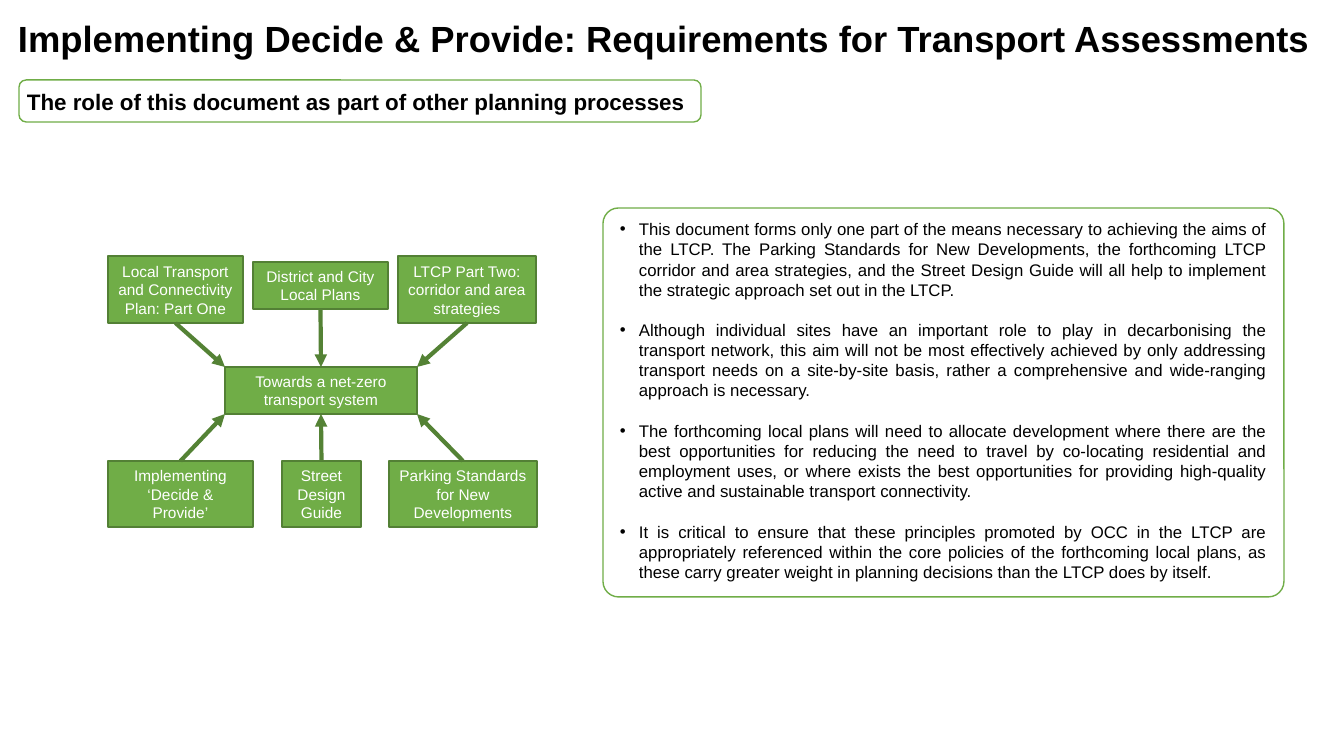
from lxml.etree import SubElement
from pptx import Presentation
from pptx.dml.color import RGBColor
from pptx.enum.shapes import MSO_CONNECTOR, MSO_SHAPE
from pptx.enum.text import MSO_ANCHOR, MSO_AUTO_SIZE, PP_ALIGN
from pptx.oxml.ns import qn
from pptx.util import Pt

SCALE = 12192000 / 1344  # EMU in one px
FONT = "Arial"
COLORS = {
    "text": "000000",
    "white": "FFFFFF",
    "green": "70AD47",
    "edge": "538035",
    "arrow": "548235",
}

TITLE = "Implementing Decide & Provide: Requirements for Transport Assessments"
ROLE = "The role of this document as part of other planning processes"

# Central box, then the documents feeding it: left, top, width, height, lines
HUB = (225, 367, 192, 47, ["Towards a net-zero", "transport system"])
UPPER = [
    (108, 256, 135, 67, ["Local Transport and Connectivity Plan: Part One"]),
    (253, 262, 135, 47, ["District and City", "Local Plans"]),
    (398, 256, 138, 67, ["LTCP Part Two: corridor and area strategies"]),
]
LOWER = [
    (108, 461, 145, 66, ["Implementing ‘Decide & Provide’"]),
    (282, 461, 79, 66, ["Street Design Guide"]),
    (389, 461, 148, 66, ["Parking Standards for New Developments"]),
]

POINTS = [
    "This document forms only one part of the means necessary to achieving "
    "the aims of the LTCP. The Parking Standards for New Developments, the "
    "forthcoming LTCP corridor and area strategies, and the Street Design "
    "Guide will all help to implement the strategic approach set out in the "
    "LTCP.",
    "Although individual sites have an important role to play in "
    "decarbonising the transport network, this aim will not be most "
    "effectively achieved by only addressing transport needs on a "
    "site-by-site basis, rather a comprehensive and wide-ranging approach is "
    "necessary.",
    "The forthcoming local plans will need to allocate development where "
    "there are the best opportunities for reducing the need to travel by "
    "co-locating residential and employment uses, or where exists the best "
    "opportunities for providing high-quality active and sustainable "
    "transport connectivity.",
    "It is critical to ensure that these principles promoted by OCC in the "
    "LTCP are appropriately referenced within the core policies of the "
    "forthcoming local plans, as these carry greater weight in planning "
    "decisions than the LTCP does by itself.",
]


def px(*values):
    return [round(value * SCALE) for value in values]


def color(name):
    return RGBColor.from_string(COLORS[name])


def add_shape(slide, kind, area, fill, line):
    shape = slide.shapes.add_shape(kind, *px(*area))
    shape.shadow.inherit = False
    shape.fill.solid()
    shape.fill.fore_color.rgb = color(fill)
    shape.line.color.rgb = color(line)
    shape.line.width = Pt(1)
    return shape


def add_panel(slide, area, radius):
    panel = add_shape(slide, MSO_SHAPE.ROUNDED_RECTANGLE, area, "white", "green")
    panel.adjustments[0] = radius


def write(frame, lines, size, ink, align, bold=False, bullet=False):
    for index, line in enumerate(lines):
        para = frame.add_paragraph() if index else frame.paragraphs[0]
        if bullet:
            props = para._p.get_or_add_pPr()
            indent, = px(19)
            props.set("marL", str(indent))
            props.set("indent", str(-indent))
            SubElement(props, qn("a:buFont"), typeface=FONT)
            SubElement(props, qn("a:buChar"), char="•")
            if index:
                para.space_before = Pt(14.4)
        para.alignment = align
        run = para.add_run()
        run.text = line
        run.font.name = FONT
        run.font.size = Pt(size)
        run.font.bold = bold
        run.font.color.rgb = color(ink)


def add_text(slide, area, lines, size, align, wrap=True, **style):
    frame = slide.shapes.add_textbox(*px(*area)).text_frame
    frame.word_wrap = wrap
    frame.auto_size = MSO_AUTO_SIZE.SHAPE_TO_FIT_TEXT
    write(frame, lines, size, "text", align, **style)


def add_box(slide, *area, lines):
    box = add_shape(slide, MSO_SHAPE.RECTANGLE, area, "green", "edge")
    frame = box.text_frame
    frame.word_wrap = True
    frame.auto_size = MSO_AUTO_SIZE.SHAPE_TO_FIT_TEXT
    frame.vertical_anchor = MSO_ANCHOR.MIDDLE
    write(frame, lines, 11, "white", PP_ALIGN.CENTER)


def add_arrow(slide, start, end):
    arrow = slide.shapes.add_connector(MSO_CONNECTOR.STRAIGHT, *px(*start, *end))
    arrow.line.color.rgb = color("arrow")
    arrow.line.width = Pt(3)
    SubElement(arrow.line._get_or_add_ln(), qn("a:tailEnd"), type="triangle")
    SubElement(arrow._element.spPr, qn("a:effectLst"))


def add_chart_of_plans(slide):
    left, top, width, height, lines = HUB
    add_box(slide, left, top, width, height, lines=lines)
    # Each row points at the left corner, middle and right corner of the hub
    for row, above in ((UPPER, True), (LOWER, False)):
        for index, (x, y, w, h, label) in enumerate(row):
            add_box(slide, x, y, w, h, lines=label)
            start = (x + w / 2, y + h if above else y)
            end = (left + index * width / 2, top if above else top + height)
            add_arrow(slide, start, end)


def main():
    deck = Presentation()
    deck.slide_width, deck.slide_height = px(1344, 756)
    slide = deck.slides.add_slide(deck.slide_layouts[6])

    # Heading
    add_text(slide, (8, 11, 1336, 54), [TITLE], 26, PP_ALIGN.LEFT,
             wrap=False, bold=True)
    add_panel(slide, (19, 80, 682, 42), 0.17)
    add_text(slide, (17, 83, 682, 37), [ROLE], 16, PP_ALIGN.JUSTIFY, bold=True)

    # Diagram of related documents
    add_chart_of_plans(slide)

    # Explanation
    add_panel(slide, (603, 208, 681, 389), 0.04)
    add_text(slide, (610, 214, 667, 377), POINTS, 12, PP_ALIGN.JUSTIFY,
             bullet=True)

    deck.save("out.pptx")


if __name__ == "__main__":
    main()
